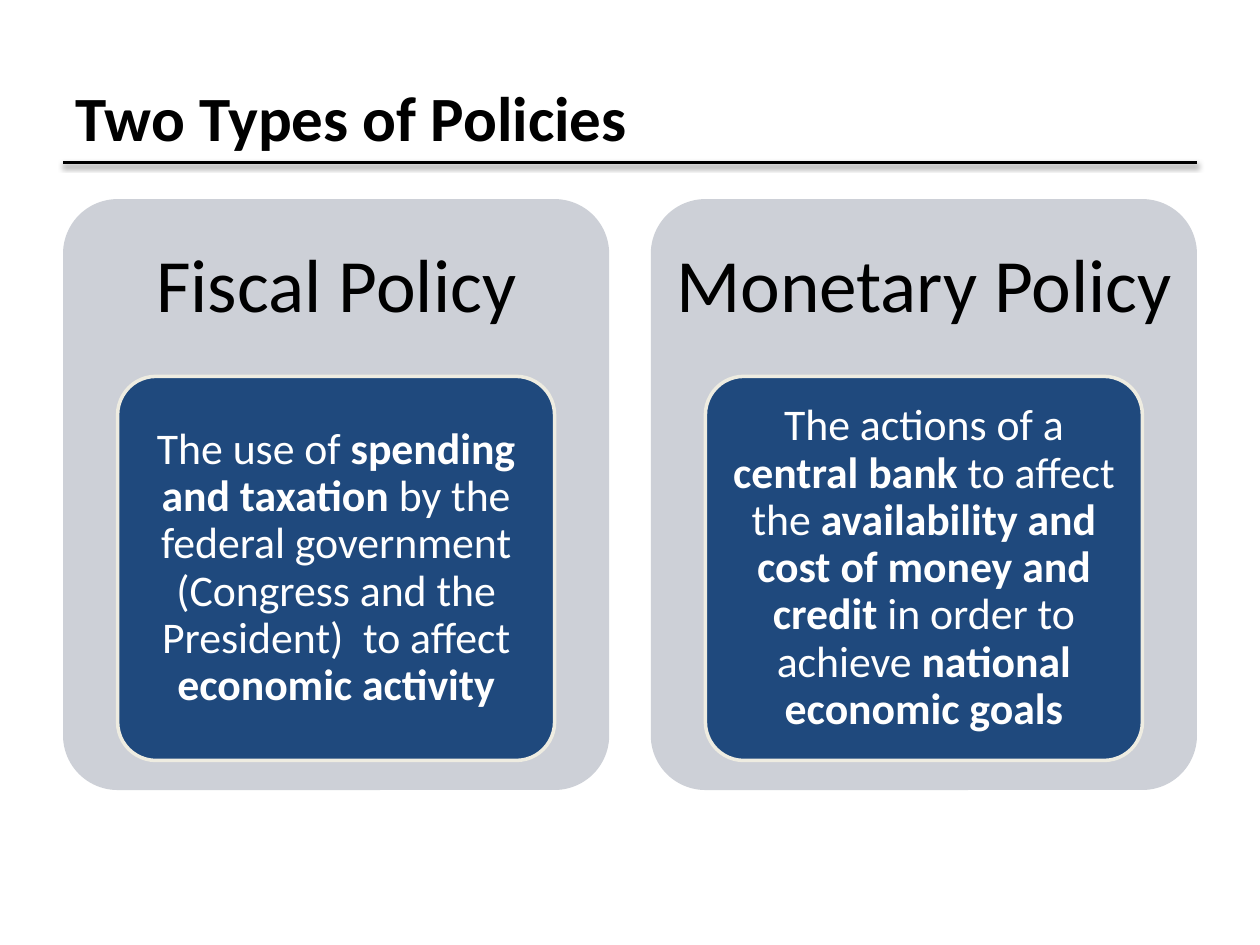
from dataclasses import dataclass

from lxml import etree
from pptx import Presentation
from pptx.dml.color import RGBColor
from pptx.enum.shapes import MSO_CONNECTOR, MSO_SHAPE
from pptx.enum.text import MSO_ANCHOR, PP_ALIGN
from pptx.oxml import parse_xml
from pptx.oxml.ns import nsdecls, qn
from pptx.util import Inches, Pt


@dataclass(frozen=True)
class Theme:
    font: str = "Calibri"
    black: RGBColor = RGBColor(0, 0, 0)
    white: RGBColor = RGBColor(255, 255, 255)
    panel: RGBColor = RGBColor(0xCD, 0xD0, 0xD7)
    card: RGBColor = RGBColor(0x1F, 0x49, 0x7D)
    card_edge: RGBColor = RGBColor(0xEE, 0xEC, 0xE1)
    title_size: int = 36
    heading_size: int = 43
    body_size: int = 25
    line_width: int = 2


THEME = Theme()

# Each policy: heading, then (text, bold) pieces of its definition
POLICIES = [
    ("Fiscal Policy", [
        ("The use of ", False),
        ("spending and taxation ", True),
        ("by the federal government (Congress and the President)  to affect ", False),
        ("economic activity", True),
    ]),
    ("Monetary Policy", [
        ("The actions of a ", False),
        ("central bank ", True),
        ("to affect the ", False),
        ("availability and cost of money and credit ", True),
        ("in order to achieve ", False),
        ("national economic goals", True),
    ]),
]


def fill_text(shape, pieces, size, color, margins, align=PP_ALIGN.CENTER, spacing=0.9):
    frame = shape.text_frame
    frame.word_wrap = True
    frame.vertical_anchor = MSO_ANCHOR.MIDDLE
    frame.margin_left = frame.margin_right = Inches(margins[0])
    frame.margin_top = frame.margin_bottom = Inches(margins[1])
    paragraph = frame.paragraphs[0]
    paragraph.alignment = align
    paragraph.line_spacing = spacing
    paragraph.font.name = THEME.font
    paragraph.font.size = Pt(size)
    paragraph.font.color.rgb = color
    for text, bold in pieces:
        run = paragraph.add_run()
        run.text = text
        run.font.bold = bold


def add_round_box(slide, left, top, width, height, fill, edge=None):
    shape = slide.shapes.add_shape(
        MSO_SHAPE.ROUNDED_RECTANGLE,
        Inches(left), Inches(top), Inches(width), Inches(height))
    shape.adjustments[0] = 0.1
    shape.shadow.inherit = False
    shape.fill.solid()
    shape.fill.fore_color.rgb = fill
    if edge is None:
        shape.line.fill.background()
    else:
        shape.line.color.rgb = edge
        shape.line.width = Pt(THEME.line_width)
    return shape


def add_title(slide, left, top, width, height, rule_y):
    # Rule with a soft shadow below it
    rule = slide.shapes.add_connector(
        MSO_CONNECTOR.STRAIGHT,
        Inches(left), Inches(rule_y), Inches(left + width), Inches(rule_y))
    rule.line.color.rgb = THEME.black
    rule.line.width = Pt(THEME.line_width)
    effects = etree.SubElement(rule.element.spPr, qn("a:effectLst"))
    effects.append(parse_xml(
        f'<a:outerShdw {nsdecls("a")} blurRad="{Pt(3.1)}" dist="{Pt(1.6)}" '
        'dir="5400000" rotWithShape="0"><a:srgbClr val="000000">'
        '<a:alpha val="38000"/></a:srgbClr></a:outerShdw>'))

    # Title text
    title = slide.shapes.add_textbox(
        Inches(left), Inches(top), Inches(width), Inches(height))
    fill_text(title, [("Two Types of Policies", True)], THEME.title_size,
              THEME.black, (0.1, 0.05), PP_ALIGN.LEFT, 1.0)


def add_policy(slide, left, top, width, height, heading, definition):
    add_round_box(slide, left, top, width, height, THEME.panel)

    # Heading takes the top 30% of the panel
    heading_height = height * 0.3
    heading_box = slide.shapes.add_textbox(
        Inches(left), Inches(top), Inches(width), Inches(heading_height))
    fill_text(heading_box, [(heading, False)], THEME.heading_size,
              THEME.black, (0.1, 0.18))

    # Definition card, 80% of the panel's width and 65% of its height
    card = add_round_box(
        slide, left + width * 0.1, top + heading_height,
        width * 0.8, height * 0.65, THEME.card, THEME.card_edge)
    fill_text(card, definition, THEME.body_size, THEME.white, (0.07, 0.05))


def main():
    presentation = Presentation()
    presentation.slide_width = Inches(10)
    presentation.slide_height = Inches(7.5)
    slide = presentation.slides.add_slide(presentation.slide_layouts[6])

    left, width, gap = 0.5, 9, 0.33
    add_title(slide, left, 0.3, width, 1.25, rule_y=1.29)

    panel_width = (width - gap) / len(POLICIES)
    for index, (heading, definition) in enumerate(POLICIES):
        add_policy(slide, left + index * (panel_width + gap), 1.58,
                   panel_width, 4.69, heading, definition)

    presentation.save("out.pptx")


if __name__ == "__main__":
    main()
